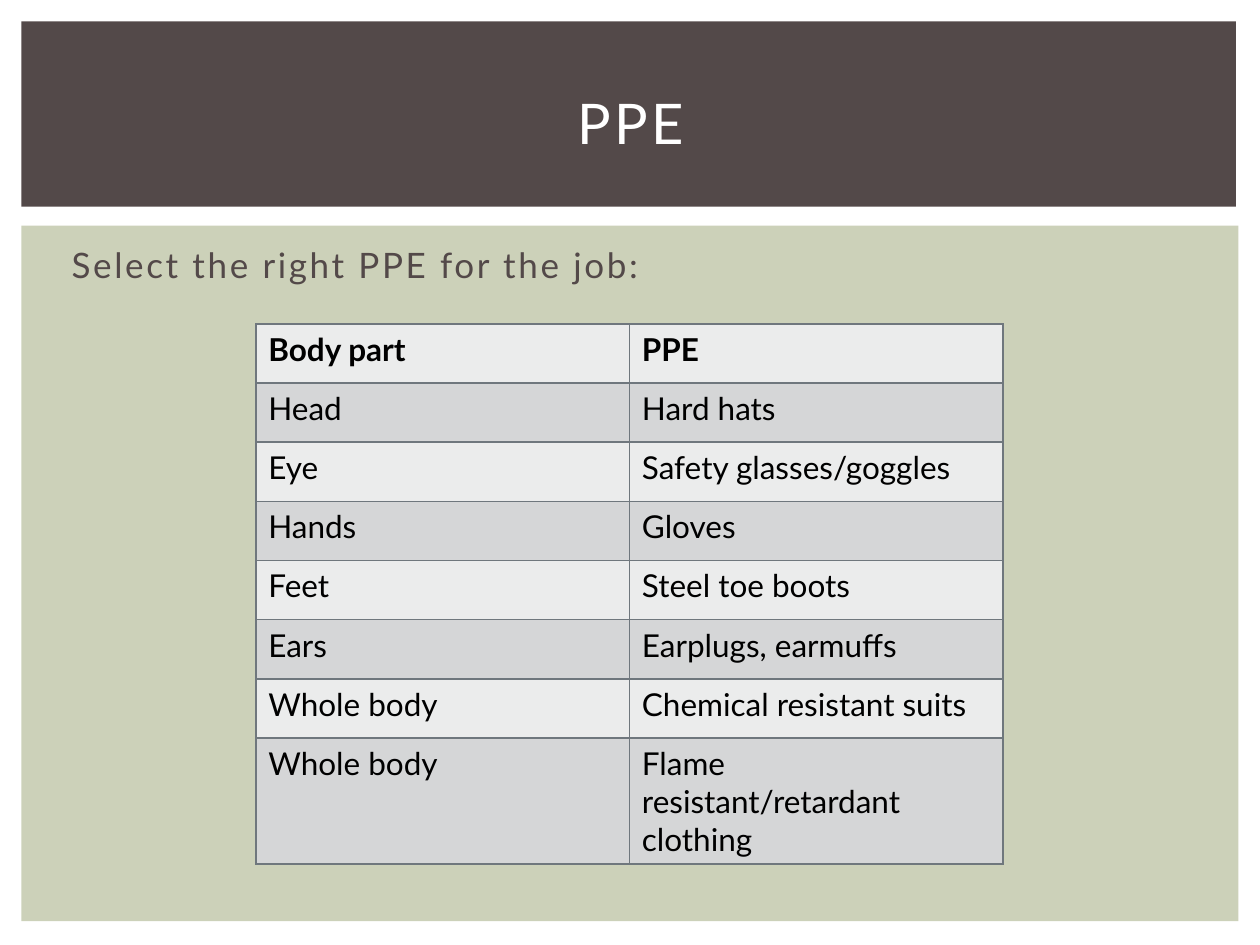
from lxml import etree
from pptx import Presentation
from pptx import util as u
from pptx.dml.color import RGBColor
from pptx.enum import shapes, text
from pptx.oxml import ns

COLORS = {
    "brown": "534949", "sage": "CCD1B9", "white": "FFFFFF", "black": "000000",
    "light_row": "EBECEC", "dark_row": "D5D6D7", "border": "6F777D",
}
EQUIPMENT = [
    ("Body part", "PPE"),
    ("Head", "Hard hats"),
    ("Eye", "Safety glasses/goggles"),
    ("Hands", "Gloves"),
    ("Feet", "Steel toe boots"),
    ("Ears", "Earplugs, earmuffs"),
    ("Whole body", "Chemical resistant suits"),
    ("Whole body", "Flame resistant/retardant clothing"),
]


class SlideBuilder:
    """Places elements on one slide; boxes are in grid units of one inch."""

    font_name = "Lato"
    columns, rows = 10, 7.5

    def __init__(self, deck):
        deck.slide_width, deck.slide_height = u.Inches(self.columns), u.Inches(self.rows)
        self.slide = deck.slides.add_slide(deck.slide_layouts[6])

    def color(self, name):
        return RGBColor.from_string(COLORS[name])

    def place(self, box):
        return [u.Inches(length) for length in box]

    def panel(self, box, fill):
        band = self.slide.shapes.add_shape(shapes.MSO_SHAPE.RECTANGLE, *self.place(box))
        band.shadow.inherit = False
        band.fill.solid()
        band.fill.fore_color.rgb = self.color(fill)
        band.line.fill.background()

    def add_words(self, frame, words, color, spacing=0, **font_format):
        """Fill a text frame with one run; spacing is in points."""
        run = frame.paragraphs[0].add_run()
        run.text = words
        for key, value in {"name": self.font_name, **font_format}.items():
            setattr(run.font, key, value)
        run.font.color.rgb = self.color(color)
        if spacing:
            run.font._element.set("spc", str(int(spacing * 100)))

    def label(self, box, words, color, size, spacing, align, anchor, indent=0):
        frame = self.slide.shapes.add_textbox(*self.place(box)).text_frame
        frame.word_wrap = True
        frame.vertical_anchor = anchor
        self.add_words(frame, words, color, spacing, size=u.Pt(size))
        frame.paragraphs[0].alignment = align
        if indent:
            properties = frame.paragraphs[0]._p.get_or_add_pPr()
            properties.set("marL", str(u.Inches(indent)))

    def outline(self, cell, color, width):
        properties = cell._tc.get_or_add_tcPr()
        for place, side in enumerate(("lnL", "lnR", "lnT", "lnB")):
            edge = etree.Element(ns.qn(f"a:{side}"), w=str(u.Pt(width)))
            solid = etree.SubElement(edge, ns.qn("a:solidFill"))
            etree.SubElement(solid, ns.qn("a:srgbClr"), val=COLORS[color])
            properties.insert(place, edge)

    def table(self, box, entries, row_height, last_height):
        grid = self.slide.shapes.add_table(
            len(entries), len(entries[0]), *self.place(box)).table
        for row in grid.rows:
            row.height = u.Inches(row_height)
        grid.rows[len(entries) - 1].height = u.Inches(last_height)
        for r, entry in enumerate(entries):
            for c, words in enumerate(entry):
                cell = grid.cell(r, c)
                cell.fill.solid()
                cell.fill.fore_color.rgb = self.color("dark_row" if r % 2 else "light_row")
                self.outline(cell, "border", 1)
                self.add_words(cell.text_frame, words, "black", size=u.Pt(18), bold=r == 0)


def main():
    deck = Presentation()
    ppe = SlideBuilder(deck)
    ppe.panel((0.17, 1.79, 9.66, 5.52), "sage")
    ppe.panel((0.17, 0.17, 9.64, 1.47), "brown")
    ppe.label((0.42, 1.88, 9.19, 0.5), "Select the right PPE for the job:", "brown",
              20, 1.5, text.PP_ALIGN.LEFT, text.MSO_ANCHOR.TOP, indent=0.05)
    ppe.label((0.42, 0.39, 9.17, 1.15), "PPE", "white",
              32, 2, text.PP_ALIGN.CENTER, text.MSO_ANCHOR.MIDDLE)
    ppe.table((2.03, 2.57, 5.93, 4.31), EQUIPMENT, row_height=0.47, last_height=1)
    deck.save("out.pptx")


if __name__ == "__main__":
    main()
